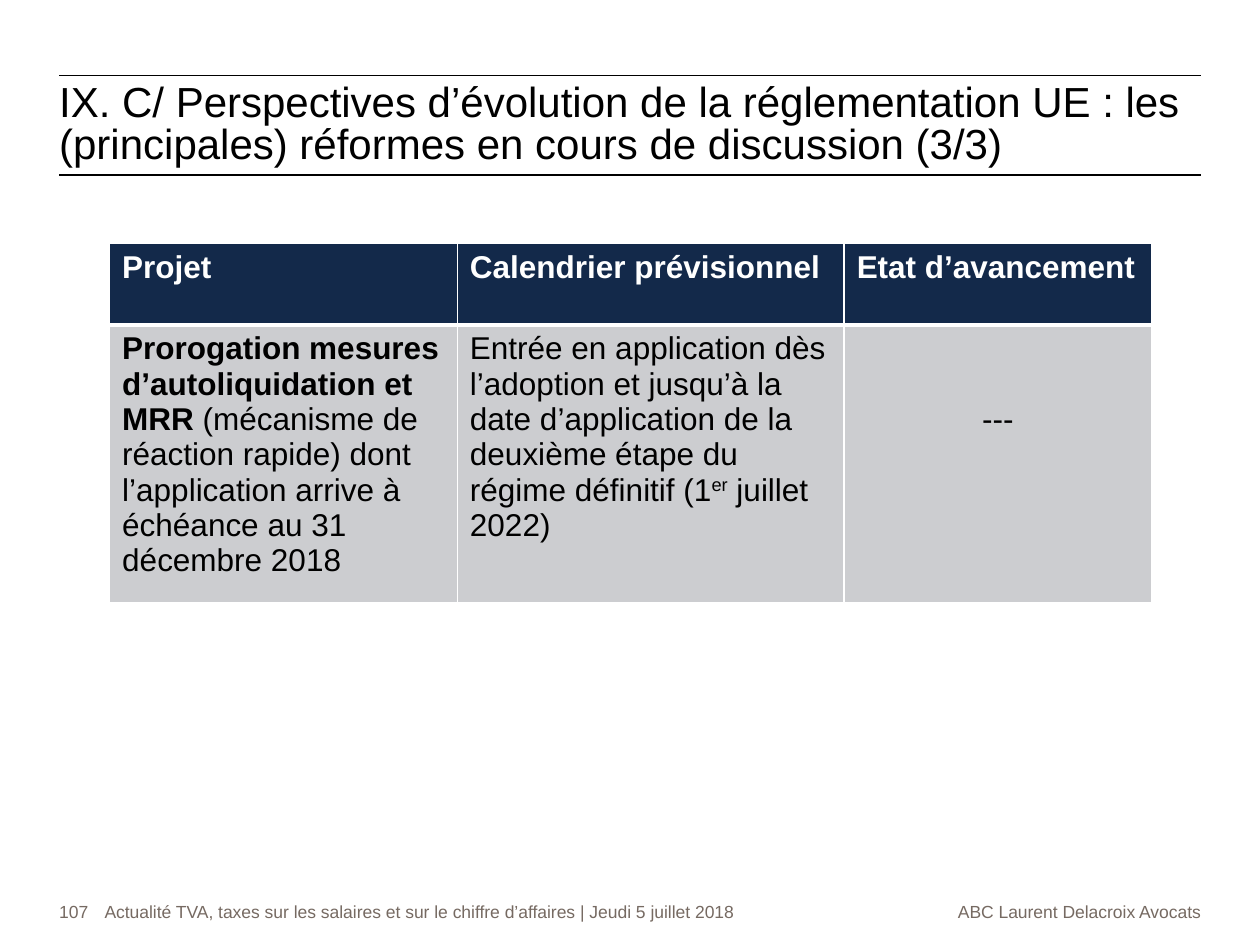
from lxml.etree import SubElement
from pptx import Presentation
from pptx.dml.color import RGBColor
from pptx.enum.shapes import MSO_CONNECTOR
from pptx.enum.text import MSO_ANCHOR, PP_ALIGN as ALIGN
from pptx.oxml import parse_xml
from pptx.oxml.ns import nsdecls, qn
from pptx.util import Inches, Pt

# Content
TITLE = ("IX. C/ Perspectives d’évolution de la réglementation UE : les "
         "(principales) réformes en cours de discussion (3/3)")
PAGE_NUMBER = "107"
EVENT = "Actualité TVA, taxes sur les salaires et sur le chiffre d’affaires | Jeudi 5 juillet 2018"
FIRM = "ABC Laurent Delacroix Avocats"

# Each cell is a list of (text, style) runs
ROWS = [
    [[("Projet", "bold")],
     [("Calendrier prévisionnel", "bold")],
     [("Etat d’avancement", "bold")]],
    [[("Prorogation mesures d’autoliquidation et MRR ", "bold"),
      ("(mécanisme de réaction rapide) dont l’application arrive à "
       "échéance au 31 décembre 2018", "plain")],
     [("Entrée en application dès l’adoption et jusqu’à la date d’application "
       "de la deuxième étape du régime définitif (1", "plain"),
      ("er", "superscript"),
      (" juillet 2022)", "plain")],
     [("---", "plain")]],
]
COLUMN_WIDTHS = [2.76, 3.07, 2.44]
ROW_HEIGHTS = [0.65, 2.05]
ROW_COLORS = [("13294A", "FFFFFF"), ("CCCDD0", "000000")]  # fill, text

# Layout
LEFT, RIGHT = 0.47, 9.53
TITLE_TOP, TITLE_BOTTOM = 0.6, 1.39
FOOTER_TOP, FOOTER_HEIGHT = 7.15, 0.28
BLACK, WHITE, FOOTER_GREY = "000000", "FFFFFF", "766A62"


def rgb(color):
    return RGBColor.from_string(color)


def style_font(font, size, color):
    font.name, font.size = "Arial", Pt(size)
    font.color.rgb = rgb(color)


def add_text(slide, text, left, top, width, height, size, color, align=ALIGN.LEFT):
    frame = slide.shapes.add_textbox(
        Inches(left), Inches(top), Inches(width), Inches(height)).text_frame
    frame.word_wrap = True
    frame.margin_left = frame.margin_right = frame.margin_top = frame.margin_bottom = 0
    paragraph = frame.paragraphs[0]
    paragraph.text, paragraph.alignment = text, align
    style_font(paragraph.font, size, color)
    return frame


def add_rule(slide, y):
    rule = slide.shapes.add_connector(
        MSO_CONNECTOR.STRAIGHT, Inches(LEFT), Inches(y), Inches(RIGHT), Inches(y))
    rule.line.color.rgb, rule.line.width = rgb(BLACK), Pt(1)
    SubElement(rule._element.spPr, qn("a:effectLst"))


def set_borders(cell, **widths):
    properties = cell._tc.get_or_add_tcPr()
    for position, side in enumerate("LRTB"):
        properties.insert(position, parse_xml(
            f'<a:ln{side} {nsdecls("a")} w="{Pt(widths.get(side, 1))}"><a:solidFill>'
            f'<a:srgbClr val="{WHITE}"/></a:solidFill></a:ln{side}>'))


def fill_cell(cell, runs, fill, color):
    cell.fill.solid()
    cell.fill.fore_color.rgb = rgb(fill)
    paragraph = cell.text_frame.paragraphs[0]
    style_font(paragraph.font, 18, color)
    for text, style in runs:
        run = paragraph.add_run()
        run.text = text
        style_font(run.font, 18, color)
        run.font.bold = style == "bold"
        if style == "superscript":
            run._r.get_or_add_rPr().set("baseline", "30000")


presentation = Presentation()
presentation.slide_width, presentation.slide_height = Inches(10), Inches(7.5)
slide = presentation.slides.add_slide(presentation.slide_layouts[6])

# Title between two rules
for y in (TITLE_TOP, TITLE_BOTTOM):
    add_rule(slide, y)
title = add_text(slide, TITLE, LEFT, TITLE_TOP, RIGHT - LEFT,
                 TITLE_BOTTOM - TITLE_TOP, 24, BLACK)
title.vertical_anchor = MSO_ANCHOR.MIDDLE
title.paragraphs[0].line_spacing = Pt(24)

# Footer
for text, left, width, align in [
    (PAGE_NUMBER, LEFT, 0.35, ALIGN.LEFT),
    (EVENT, 0.83, 6.43, ALIGN.LEFT),
    (FIRM, 5, RIGHT - 5, ALIGN.RIGHT),
]:
    add_text(slide, text, left, FOOTER_TOP, width, FOOTER_HEIGHT, 10, FOOTER_GREY, align)

# Reform table
reforms = slide.shapes.add_table(
    len(ROWS), len(COLUMN_WIDTHS), Inches(0.87), Inches(1.93),
    Inches(sum(COLUMN_WIDTHS)), Inches(sum(ROW_HEIGHTS))).table
for column, width in zip(reforms.columns, COLUMN_WIDTHS):
    column.width = Inches(width)
for r, (cells, height, colors) in enumerate(zip(ROWS, ROW_HEIGHTS, ROW_COLORS)):
    reforms.rows[r].height = Inches(height)
    for c, runs in enumerate(cells):
        cell = reforms.cell(r, c)
        fill_cell(cell, runs, *colors)
        set_borders(cell, **({"B": 3} if r == 0 else {"T": 3}))

# The status sits on the third line of its cell
status = reforms.cell(1, 2)
status.margin_top = Inches(0.61)
status.text_frame.paragraphs[0].alignment = ALIGN.CENTER

presentation.save("out.pptx")
